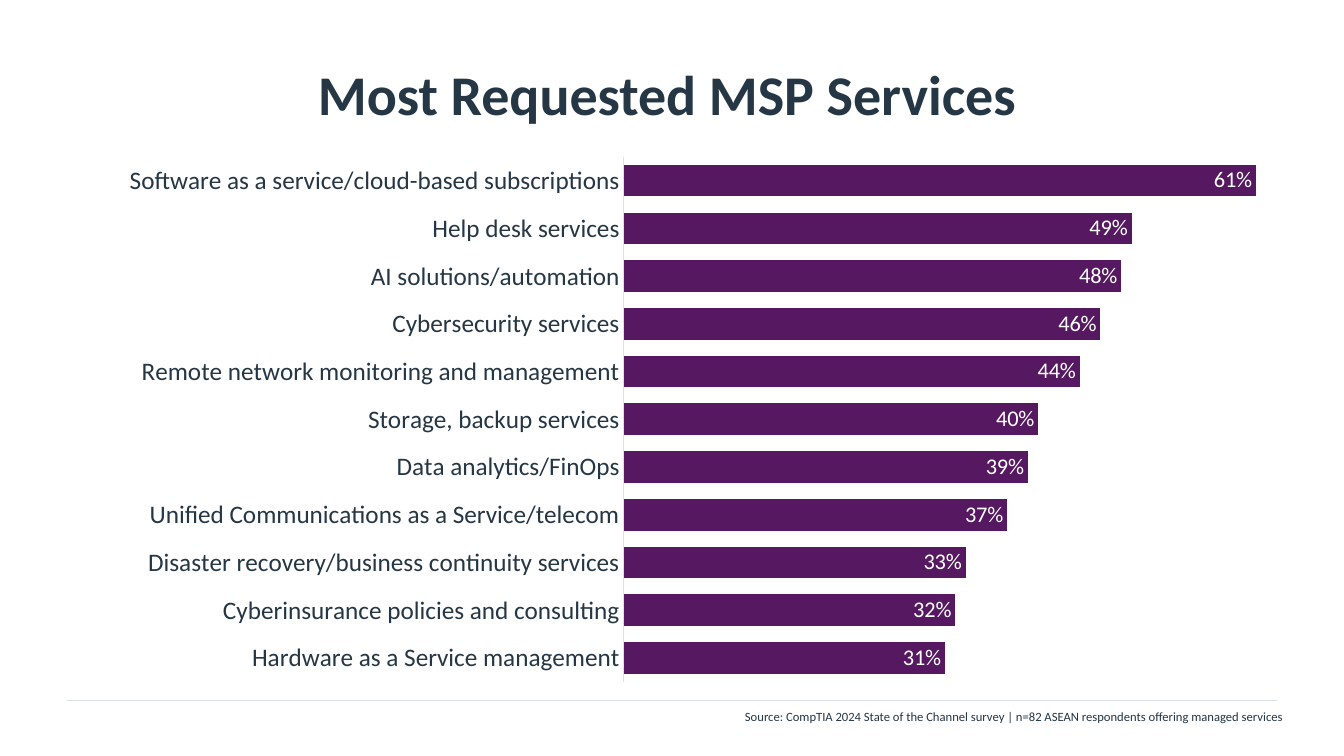
import pptx
import pptx.chart.data
import pptx.dml.color
import pptx.enum.chart
import pptx.enum.shapes
import pptx.enum.text
import pptx.oxml
import pptx.oxml.ns
import pptx.util
from dataclasses import dataclass

Pt = pptx.util.Pt
Align = pptx.enum.text.PP_ALIGN
Anchor = pptx.enum.text.MSO_ANCHOR
Fit = pptx.enum.text.MSO_AUTO_SIZE
Kind = pptx.enum.chart


@dataclass(frozen=True)
class Theme:
    face: str = "Calibri"
    paper: str = "FEFFFE"
    ink: str = "253644"
    bar: str = "561961"
    axis: str = "D8E1EA"
    rule: str = "DADFE1"
    title: int = 40
    name: int = 18
    value: int = 16
    base: int = 10
    note: int = 9


def tint(code):
    return pptx.dml.color.RGBColor.from_string(code)


def style(font, face, size, color, bold=False):
    font.name, font.size, font.bold = face, Pt(size), bold
    font.color.rgb = tint(color)


class Deck:
    """Draw one slide on a grid of 20 columns and 30 rows."""

    def __init__(self, theme):
        self.theme = theme
        self.file = pptx.Presentation()
        self.file.slide_width = pptx.util.Inches(13.33)
        self.file.slide_height = pptx.util.Inches(7.5)
        self.col = self.file.slide_width / 20
        self.row = self.file.slide_height / 30
        self.slide = self.file.slides.add_slide(self.file.slide_layouts[6])
        fill = self.slide.background.fill
        fill.solid()
        fill.fore_color.rgb = tint(theme.paper)

    def place(self, x, y, w, h):
        return (round(x * self.col), round(y * self.row),
                round(w * self.col), round(h * self.row))

    def text(self, words, box, size, align, bold=False, left=0.1,
             anchor=Anchor.TOP, fit=Fit.NONE):
        frame = self.slide.shapes.add_textbox(*self.place(*box)).text_frame
        frame.word_wrap = True
        frame.auto_size = fit
        frame.vertical_anchor = anchor
        frame.margin_left = pptx.util.Inches(left)
        para = frame.paragraphs[0]
        para.alignment = align
        run = para.add_run()
        run.text = words
        style(run.font, self.theme.face, size, self.theme.ink, bold)

    def rule(self, x, y, w):
        left, top, wide, _ = self.place(x, y, w, 0)
        line = self.slide.shapes.add_connector(
            pptx.enum.shapes.MSO_CONNECTOR.STRAIGHT, left, top, left + wide, top)
        line.line.color.rgb = tint(self.theme.rule)
        line.line.width = Pt(0.5)
        line._element.spPr.append(pptx.oxml.parse_xml(
            f'<a:effectLst {pptx.oxml.ns.nsdecls("a")}/>'))

    def bars(self, rows, box, top, gap, split):
        theme = self.theme
        data = pptx.chart.data.CategoryChartData(number_format="0%")
        data.categories = [name for name, _ in reversed(rows)]
        data.add_series("Series 1", [share for _, share in reversed(rows)])
        chart = self.slide.shapes.add_chart(
            Kind.XL_CHART_TYPE.BAR_CLUSTERED, *self.place(*box), data).chart
        chart.has_legend = chart.has_title = False
        style(chart.font, theme.face, theme.base, theme.ink)
        names, scale = chart.category_axis, chart.value_axis
        names.major_tick_mark = names.minor_tick_mark = Kind.XL_TICK_MARK.NONE
        names.format.line.color.rgb = tint(theme.axis)
        names.format.line.width = Pt(0.75)
        style(names.tick_labels.font, theme.face, theme.name, theme.ink)
        scale.minimum_scale, scale.maximum_scale = 0, top
        scale.has_major_gridlines = scale.visible = False
        plot = chart.plots[0]
        plot.gap_width, plot.vary_by_categories = gap, False
        fill = plot.series[0].format.fill
        fill.solid()
        fill.fore_color.rgb = tint(theme.bar)
        plot.has_data_labels = True
        label = plot.data_labels
        label.show_value = True
        label.number_format, label.number_format_is_linked = "0%", False
        label.position = Kind.XL_LABEL_POSITION.INSIDE_END
        style(label.font, theme.face, theme.value, theme.paper)
        self.split(chart, split)

    def split(self, chart, share):
        area = chart.element.xpath("c:chart/c:plotArea")[0]
        for old in area.xpath("c:layout"):
            area.remove(old)
        sizes = {"x": share, "y": 0, "w": 1 - share, "h": 1}
        modes = "".join(f'<c:{key}Mode val="edge"/>' for key in "xy")
        parts = "".join(f'<c:{key} val="{size:.2f}"/>'
                        for key, size in sizes.items())
        area.insert(0, pptx.oxml.parse_xml(
            f'<c:layout {pptx.oxml.ns.nsdecls("c")}><c:manualLayout>'
            f'<c:layoutTarget val="inner"/>{modes}{parts}'
            '</c:manualLayout></c:layout>'))


SHARES = [
    ("Software as a service/cloud-based subscriptions", 0.61),
    ("Help desk services", 0.49),
    ("AI solutions/automation", 0.48),
    ("Cybersecurity services", 0.46),
    ("Remote network monitoring and management", 0.44),
    ("Storage, backup services", 0.4),
    ("Data analytics/FinOps", 0.39),
    ("Unified Communications as a Service/telecom", 0.37),
    ("Disaster recovery/business continuity services", 0.33),
    ("Cyberinsurance policies and consulting", 0.32),
    ("Hardware as a Service management", 0.31),
]


def main():
    theme = Theme()
    deck = Deck(theme)
    deck.rule(1, 27.8, 18)
    deck.text("Most Requested MSP Services", (1, 1.2, 18, 5), theme.title,
              Align.CENTER, bold=True, left=0, anchor=Anchor.MIDDLE)
    deck.bars(SHARES, (1, 6.2, 18, 20.88), top=0.63, gap=51, split=0.46)
    deck.text("Source: CompTIA 2024 State of the Channel survey | "
              "n=82 ASEAN respondents offering managed services",
              (9.5, 27.92, 9.73, 1), theme.note, Align.RIGHT,
              fit=Fit.SHAPE_TO_FIT_TEXT)
    deck.file.save("out.pptx")


if __name__ == "__main__":
    main()
